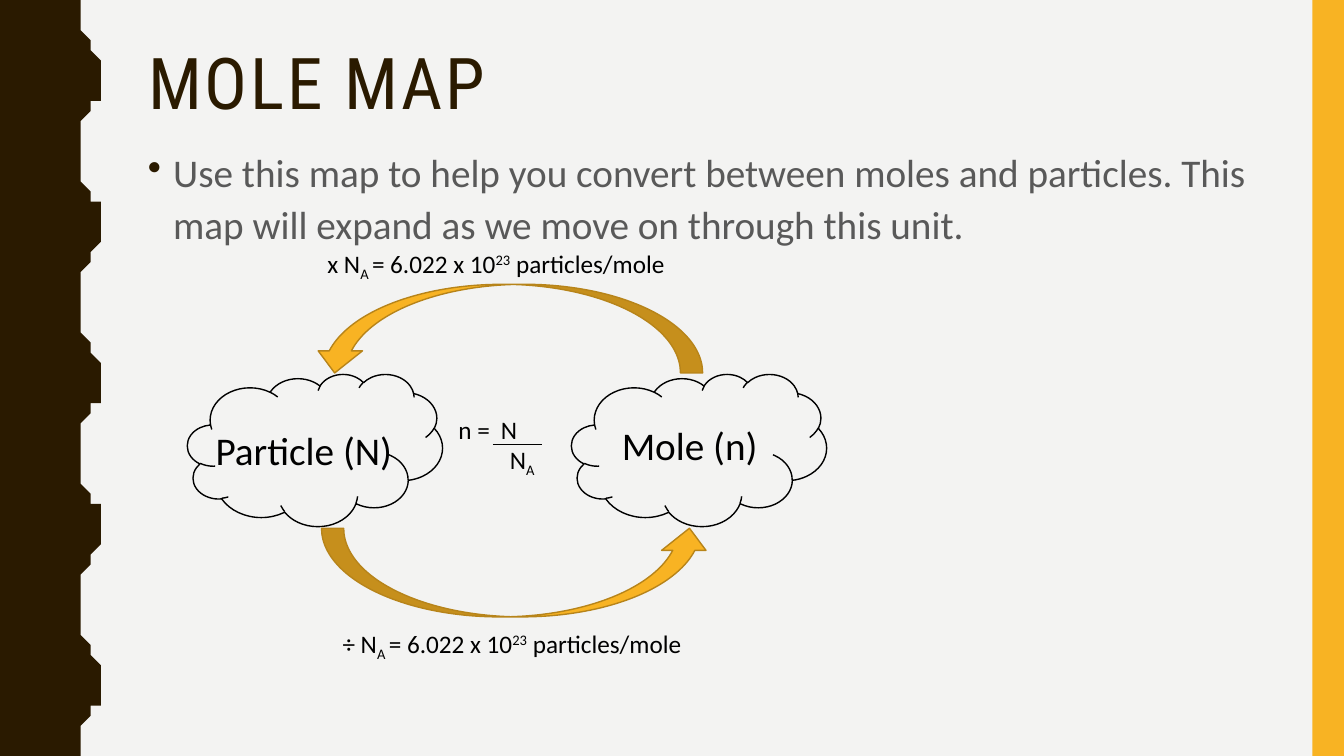
from dataclasses import dataclass

from lxml import etree
from pptx import Presentation
from pptx.dml.color import RGBColor
from pptx.enum.shapes import MSO_CONNECTOR, MSO_SHAPE
from pptx.enum.text import MSO_ANCHOR, MSO_AUTO_SIZE, PP_ALIGN
from pptx.oxml.ns import qn
from pptx.util import Inches, Pt

CLOUD = MSO_SHAPE.CLOUD
CURVED_UP = MSO_SHAPE.CURVED_UP_ARROW
RECTANGLE = MSO_SHAPE.RECTANGLE
STRAIGHT = MSO_CONNECTOR.STRAIGHT
TOP = MSO_ANCHOR.TOP
LEFT = PP_ALIGN.LEFT
FIXED = MSO_AUTO_SIZE.NONE
GROW = MSO_AUTO_SIZE.SHAPE_TO_FIT_TEXT

CELL = 0.1
COLUMNS, ROWS = 133.33, 75
SUB, SUPER = -25000, 30000


@dataclass(frozen=True)
class Theme:
    paper: str = "F3F3F2"
    dark: str = "2A1A00"
    gold: str = "F8B323"
    gold_edge: str = "B7841A"
    grey: str = "595959"
    black: str = "000000"
    body_font: str = "Calibri"
    title_font: str = "Roboto Condensed"
    title_size: int = 51
    large: int = 28
    small: int = 18


def grid(cells):
    return Inches(cells * CELL)


def color(value):
    return RGBColor.from_string(value)


class MapSlide:
    def __init__(self, deck, theme):
        self.theme = theme
        self.page = deck.slides.add_slide(deck.slide_layouts[5])
        self.paint(self.page.background, theme.paper)

    def paint(self, target, value):
        target.fill.solid()
        target.fill.fore_color.rgb = color(value)

    def finish(self, shape, fill, edge):
        shape.shadow.inherit = False
        if fill:
            self.paint(shape, fill)
        else:
            shape.fill.background()
        if edge:
            shape.line.color.rgb = color(edge)
            shape.line.width = Pt(1)
        else:
            shape.line.fill.background()

    def shape(self, kind, cells, fill=None, edge=None, rotation=0):
        shape = self.page.shapes.add_shape(kind, *map(grid, cells))
        shape.rotation = rotation
        self.finish(shape, fill, edge)

    def outline(self, points, fill):
        builder = self.page.shapes.build_freeform(0, 0, scale=grid(1))
        builder.add_line_segments(points, close=True)
        self.finish(builder.convert_to_shape(), fill, None)

    def line(self, start, end):
        line = self.page.shapes.add_connector(STRAIGHT, *map(grid, start + end))
        line.line.color.rgb = color(self.theme.black)
        line.line.width = Pt(0.5)
        etree.SubElement(line._element.spPr, qn("a:effectLst"))

    def style(self, para, font, size, value):
        para.alignment = LEFT
        para.font.name = font
        para.font.size = Pt(size)
        para.font.color.rgb = color(value)

    def title(self, text, cells):
        box = self.page.shapes.title
        box.left, box.top, box.width, box.height = map(grid, cells)
        frame = box.text_frame
        frame.text = text
        frame.vertical_anchor = TOP
        frame.auto_size = FIXED
        para = frame.paragraphs[0]
        self.style(para, self.theme.title_font, self.theme.title_size, self.theme.dark)
        para.line_spacing = 0.9
        para.runs[0]._r.get_or_add_rPr().set("spc", "200")

    def text(self, cells, lines, size, value=None, tabs=(), auto_size=GROW):
        frame = self.page.shapes.add_textbox(*map(grid, cells)).text_frame
        frame.word_wrap = True
        frame.auto_size = auto_size
        for index, spans in enumerate(lines):
            para = frame.paragraphs[0] if index == 0 else frame.add_paragraph()
            if tabs:
                stops = etree.SubElement(para._p.get_or_add_pPr(), qn("a:tabLst"))
                etree.SubElement(stops, qn("a:tab"), pos=str(grid(tabs[index])), algn="l")
            self.style(para, self.theme.body_font, size, value or self.theme.black)
            for words, baseline in spans:
                span = para.add_run()
                span.text = words
                if baseline:
                    span._r.get_or_add_rPr().set("baseline", str(baseline))
        return frame

    def bullet(self, cells, words):
        frame = self.text(cells, [[(words, 0)]], self.theme.large, self.theme.grey, auto_size=FIXED)
        para = frame.paragraphs[0]
        para.line_spacing = 1.1
        para.space_before = Pt(7)
        settings = para._p.get_or_add_pPr()
        settings.set("marL", str(grid(2.5)))
        settings.set("indent", str(-grid(2.5)))
        tint = etree.Element(qn("a:buClr"))
        etree.SubElement(tint, qn("a:srgbClr"), val=self.theme.dark)
        mark = etree.Element(qn("a:buChar"), char="•")
        defaults = settings.find(qn("a:defRPr"))
        defaults.addprevious(tint)
        defaults.addprevious(mark)


def wave_edge():
    rise = [(7.8, 0), (7.8, 0.7), (7.9, 1.4), (8, 2), (8.1, 2.5), (8.3, 2.9), (8.5, 3.3),
            (8.7, 3.8), (8.9, 4.2), (9.1, 4.6), (9.3, 5), (9.5, 5.5), (9.6, 6.1),
            (9.7, 6.8), (9.7, 7.5)]
    period = 15
    crest = rise + [(x, period - y) for x, y in reversed(rise[:-1])]
    waves = [(x, y + period * turn) for turn in range(5) for x, y in crest]
    return waves + [(0, ROWS)]


def main():
    theme = Theme()
    deck = Presentation()
    deck.slide_width, deck.slide_height = grid(COLUMNS), grid(ROWS)
    slide = MapSlide(deck, theme)

    slide.outline(wave_edge(), theme.dark)
    slide.shape(RECTANGLE, (130.2, 0, 3.13, ROWS), theme.gold)
    slide.title("MOLE MAP", (13.7, 4.2, 111.3, 16.3))
    slide.bullet((13.7, 13.8, 111.3, 52.1),
                 "Use this map to help you convert between moles and particles. "
                 "This map will expand as we move on through this unit.")

    for left in (56.7, 18.6):
        slide.shape(CLOUD, (left, 37.1, 25.3, 15.1), edge=theme.black)
    for name, cells in (("Mole (n)", (60.7, 41.3, 16.4, 5.7)),
                        ("Particle (N)", (20.4, 41.8, 21.7, 5.7))):
        slide.text(cells, [[(name, 0)]], theme.large)

    for sign, left, top in (("x", 31.5, 24.1), ("÷", 33, 61.8)):
        factor = [(f"{sign} N", 0), ("A ", SUB), ("= 6.022 x 10", 0),
                  ("23", SUPER), (" particles/mole", 0)]
        slide.text((left, top, 37.6, 4), [factor], theme.small)

    slide.text((44.5, 40.6, 11.5, 7.1), [[("n =\tN", 0)], [("\tN", 0), ("A", SUB)]],
               theme.small, tabs=(4.2, 5.1))
    slide.line((48.9, 44.1), (53.8, 44.1))

    for left, top, rotation in ((31.9, 52.4, 0), (31, 28.2, 180)):
        slide.shape(CURVED_UP, (left, top, 38.7, 8.8), theme.gold, theme.gold_edge, rotation)

    deck.save("out.pptx")


if __name__ == "__main__":
    main()
